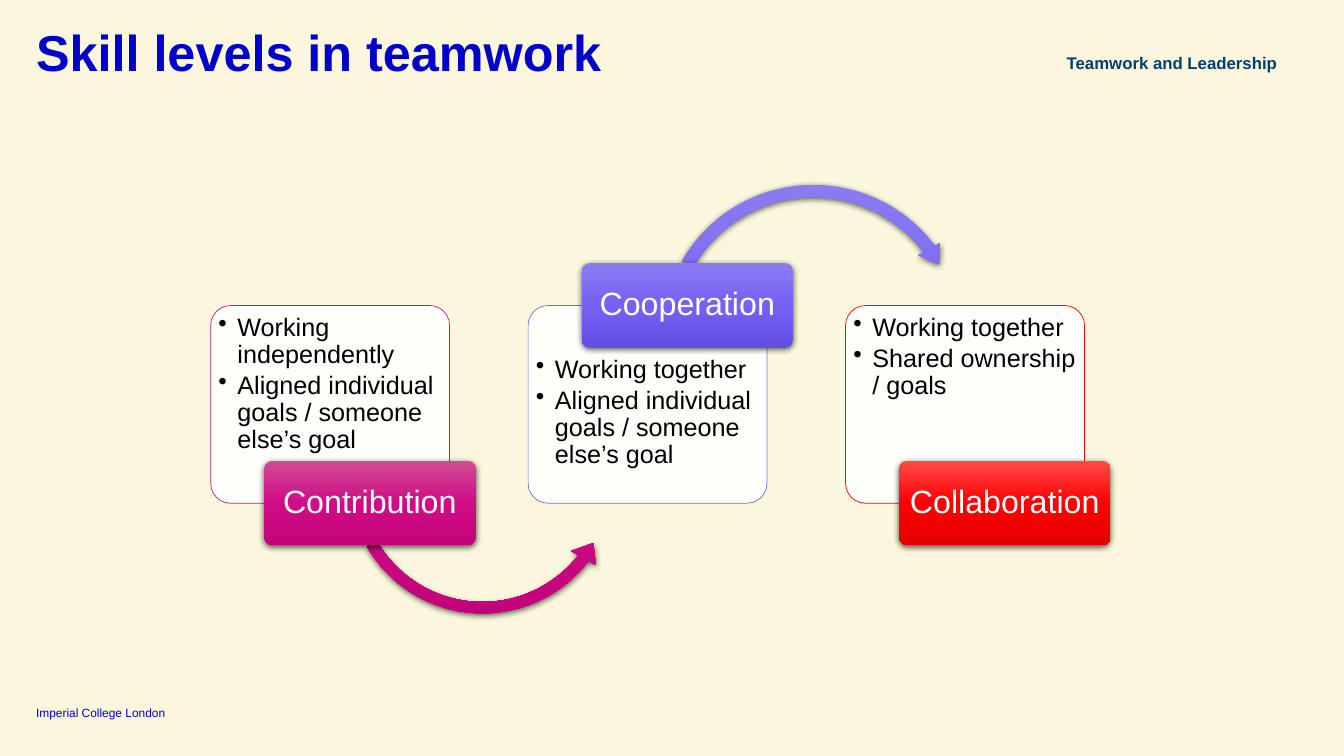
from lxml import etree
from pptx import Presentation
from pptx.dml.color import RGBColor
from pptx.enum.shapes import MSO_SHAPE
from pptx.enum.text import MSO_ANCHOR, PP_ALIGN
from pptx.oxml.ns import qn
from pptx.util import Cm, Pt

ROUNDED = MSO_SHAPE.ROUNDED_RECTANGLE
LEFT_ARC, RIGHT_ARC = MSO_SHAPE.LEFT_CIRCULAR_ARROW, MSO_SHAPE.CIRCULAR_ARROW
TOP, MIDDLE, BOTTOM = MSO_ANCHOR.TOP, MSO_ANCHOR.MIDDLE, MSO_ANCHOR.BOTTOM
LEFT, CENTER, RIGHT = PP_ALIGN.LEFT, PP_ALIGN.CENTER, PP_ALIGN.RIGHT

COLORS = {
    "background": "FBF7DC", "title": "0000CD", "course": "003E74",
    "card": "FFFFFF", "bullet": "000000", "label": "FFFFFF", "shadow": "000000",
    "pink line": "C71585", "purple line": "7B68EE", "red line": "FF0000",
}
GRADIENTS = {
    "pink": ("D14C93", "D00C87", "C1037A"),
    "purple": ("8B7CF2", "7661F5", "634EE2"),
    "red": ("FF4B4B", "FF0000", "E30000"),
}


def write(shape, lines, size, color, align, anchor, insets=(0, 0, 0, 0), spacing=0.9, bold=False):
    """Fill a shape with paragraphs; insets are left, top, right, bottom in cm."""
    frame = shape.text_frame
    frame.word_wrap = True
    frame.vertical_anchor = anchor
    frame.margin_left, frame.margin_top, frame.margin_right, frame.margin_bottom = map(Cm, insets)
    frame.text = "\n".join(lines)
    for paragraph in frame.paragraphs:
        paragraph.alignment = align
        paragraph.line_spacing = spacing
        paragraph.font.name = "Arial"
        paragraph.font.size = Pt(size)
        paragraph.font.bold = bold
        paragraph.font.color.rgb = RGBColor.from_string(COLORS[color])


def raise_shape(shape, colors):
    """Give a shape a three-stop vertical gradient and a soft drop shadow."""
    shape.line.fill.background()
    shape.fill.gradient()
    shape.fill.gradient_angle = 270
    properties = shape._element.spPr
    stops = properties.find(".//" + qn("a:gsLst"))
    for stop in list(stops):
        stops.remove(stop)
    for position, color in zip((0, 50000, 100000), colors):
        stop = etree.SubElement(stops, qn("a:gs"), pos=str(position))
        etree.SubElement(stop, qn("a:srgbClr"), val=color)
    shape.shadow.inherit = False
    shadow = etree.SubElement(
        properties.find(qn("a:effectLst")), qn("a:outerShdw"),
        blurRad=str(Pt(4.5)), dist=str(Pt(1.5)), dir="5400000", rotWithShape="0")
    shadow_color = etree.SubElement(shadow, qn("a:srgbClr"), val=COLORS["shadow"])
    etree.SubElement(shadow_color, qn("a:alpha"), val="63000")


presentation = Presentation()
presentation.slide_width, presentation.slide_height = Cm(33.87), Cm(19.05)
slide = presentation.slides.add_slide(presentation.slide_layouts[5])
slide.background.fill.solid()
slide.background.fill.fore_color.rgb = RGBColor.from_string(COLORS["background"])

title = slide.shapes.title
title.left, title.top, title.width, title.height = Cm(0.91), Cm(0.71), Cm(32.05), Cm(1.04)
write(title, ["Skill levels in teamwork"], 36, "title", LEFT, TOP, bold=True)

course = slide.shapes.add_textbox(Cm(23.5), Cm(1.3), Cm(8.69), Cm(0.86))
write(course, ["Teamwork and Leadership"], 12, "course", RIGHT, TOP, spacing=1.05, bold=True)

college = slide.shapes.add_textbox(Cm(0.91), Cm(17.75), Cm(3.94), Cm(0.38))
write(college, ["Imperial College London"], 8.5, "title", LEFT, BOTTOM, spacing=1.0)

# Each level: name, colour, label top, card text inset, bullets,
# arrow to the next level (shape, left, top, size, adjustments)
ALIGNED = "Aligned individual goals / someone else’s goal"
levels = [
    ("Contribution", "pink", 11.61, 0.08, ["Working independently", ALIGNED],
     (LEFT_ARC, 8.59, 8.53, 7.14, (0.04, 4.84, 22.59, 90.24, 0.05))),
    ("Cooperation", "purple", 6.63, 1.14, ["Working together", ALIGNED],
     (RIGHT_ARC, 16.54, 4.5, 7.92, (0.04, 4.33, 193.92, 125.76, 0.04))),
    ("Collaboration", "red", 11.61, 0.08, ["Working together", "Shared ownership / goals"], None),
]
CARD_LEFT, CARD_STEP, LABEL_OFFSET = 5.31, 8.0, 1.35

for index, (name, hue, label_top, text_inset, bullets, arrow) in enumerate(levels):
    left = CARD_LEFT + index * CARD_STEP

    card = slide.shapes.add_shape(ROUNDED, Cm(left), Cm(7.7), Cm(6.02), Cm(4.98))
    card.adjustments[0] = 0.1
    card.shadow.inherit = False
    card.fill.solid()
    card.fill.fore_color.rgb = RGBColor.from_string(COLORS["card"])
    card_color = card._element.spPr.find(qn("a:solidFill")).find(qn("a:srgbClr"))
    etree.SubElement(card_color, qn("a:alpha"), val="90000")
    card.line.color.rgb = RGBColor.from_string(COLORS[hue + " line"])
    card.line.width = Pt(0.5)
    write(card, bullets, 18, "bullet", LEFT, TOP, (0.05, text_inset, 0.05, 0))
    for paragraph in card.text_frame.paragraphs:
        paragraph.space_after = Pt(2.7)
        paragraph_properties = paragraph._p.get_or_add_pPr()
        paragraph_properties.set("marL", str(Cm(0.48)))
        paragraph_properties.set("indent", str(-Cm(0.48)))
        bullet = etree.Element(qn("a:buChar"), char="•")
        paragraph_properties.find(qn("a:defRPr")).addprevious(bullet)

    if arrow:
        arrow_kind, arrow_left, arrow_top, size, adjustments = arrow
        arc = slide.shapes.add_shape(arrow_kind, Cm(arrow_left), Cm(arrow_top), Cm(size), Cm(size))
        for position, value in enumerate(adjustments):
            arc.adjustments[position] = value
        raise_shape(arc, GRADIENTS[hue])

    label = slide.shapes.add_shape(
        ROUNDED, Cm(left + LABEL_OFFSET), Cm(label_top), Cm(5.33), Cm(2.13))
    label.adjustments[0] = 0.1
    raise_shape(label, GRADIENTS[hue])
    write(label, [name], 23, "label", CENTER, MIDDLE, (0.1, 0.08, 0.1, 0.08))

presentation.save("out.pptx")
